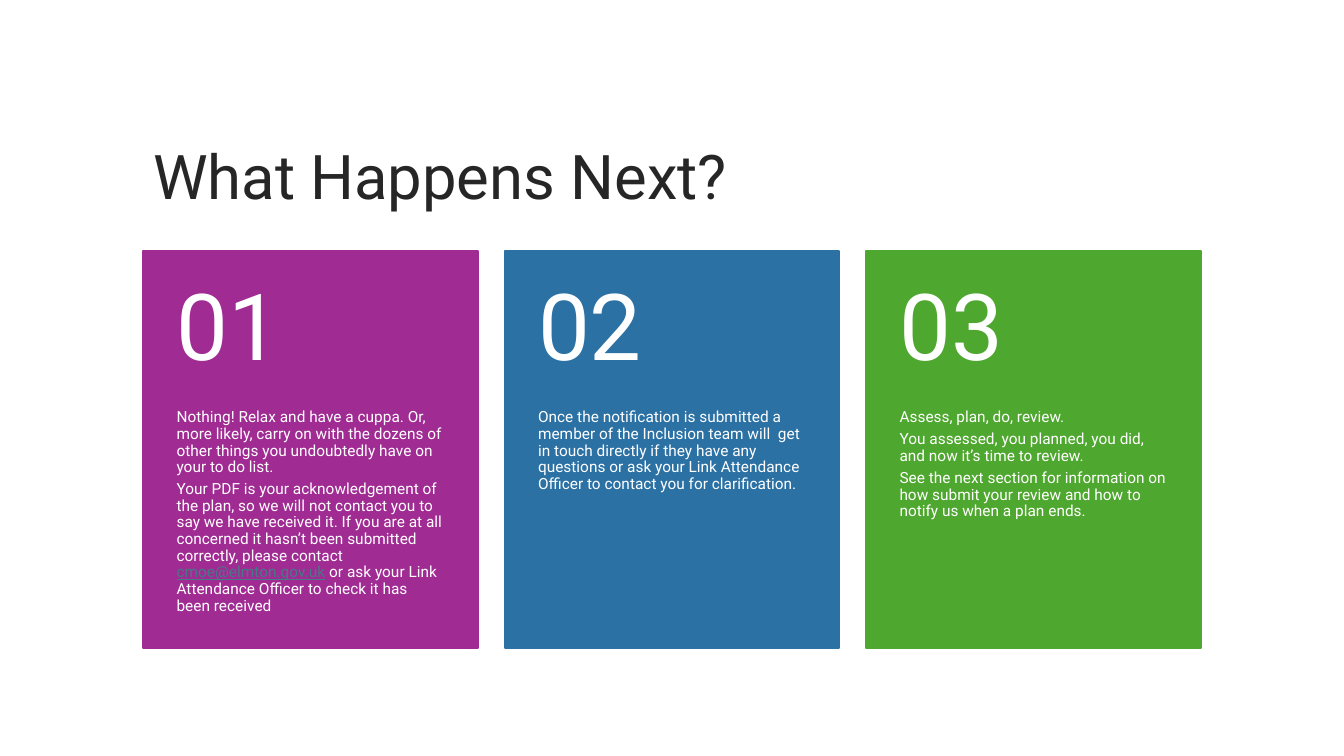
from dataclasses import dataclass

from pptx import Presentation
from pptx import util as u
from pptx.dml.color import RGBColor
from pptx.enum import shapes, text


@dataclass(frozen=True)
class Theme:
    face: str = "Roboto"
    ink: str = "262626"
    pale: str = "FFFFFF"
    link: str = "467886"
    fills: tuple = ("A02B93", "2C71A4", "4EA72E")
    title: int = 44
    digit: int = 66
    body: int = 11


class Deck:
    def __init__(self, theme):
        self.theme = theme
        self.file = Presentation()
        self.file.slide_width = u.Cm(33.87)
        self.file.slide_height = u.Cm(19.05)
        self.slide = self.file.slides.add_slide(self.file.slide_layouts[6])

    def apply(self, item, style):
        for key, value in style.items():
            setattr(item, key, value)

    def panel(self, box, fill):
        panel = self.slide.shapes.add_shape(
            shapes.MSO_SHAPE.RECTANGLE, *map(u.Cm, box))
        panel.shadow.inherit = False
        panel.fill.solid()
        panel.fill.fore_color.rgb = RGBColor.from_string(fill)
        panel.line.color.rgb = RGBColor.from_string(fill)
        panel.line.width = u.Pt(1.5)

    def text(self, box, paras, size, color, pads, middle=True, after=0.0):
        frame = self.slide.shapes.add_textbox(*map(u.Cm, box)).text_frame
        side, top, base = map(u.Cm, pads)
        anchor = text.MSO_ANCHOR.MIDDLE if middle else text.MSO_ANCHOR.TOP
        self.apply(frame, {
            "word_wrap": True, "vertical_anchor": anchor,
            "margin_left": side, "margin_right": side,
            "margin_top": top, "margin_bottom": base})
        for i, runs in enumerate(paras):
            para = frame.add_paragraph() if i else frame.paragraphs[0]
            self.apply(para, {
                "line_spacing": 0.9, "space_before": u.Pt(0),
                "space_after": u.Pt(size * after)})
            for words in runs:
                run = para.add_run()
                run.text = words
                link = "@" in words
                self.apply(run.font, {
                    "name": self.theme.face, "size": u.Pt(size),
                    "underline": link})
                hue = self.theme.link if link else color
                run.font.color.rgb = RGBColor.from_string(hue)

    def card(self, index, paras):
        look = self.theme
        left, top, wide, head, foot = 3.61 + 9.11 * index, 6.33, 8.43, 3.99, 6.0
        self.panel((left, top, wide, head + foot), look.fills[index])
        self.text((left, top + head, wide, foot), paras, look.body, look.pale,
                  (0.84, 0, 0.91), middle=False, after=0.35)
        self.text((left, top, wide, head), [[f"{index + 1:02}"]], look.digit,
                  look.pale, (0.84, 0.46, 0.46), after=0.35)


STEPS = [
    [
        ["Nothing! Relax and have a cuppa. Or, more likely, carry on with the "
         "dozens of other things you undoubtedly have on your to do list."],
        ["Your PDF is your acknowledgement of the plan, so we will not contact "
         "you to say we have received it. If you are at all concerned it hasn’t "
         "been submitted correctly, please contact ",
         "cmoe@elmton.gov.uk",
         " or ask your Link Attendance Officer to check it has been received"],
    ],
    [
        ["Once the notification is submitted a member of the Inclusion team "
         "will  get in touch directly if they have any questions or ask your "
         "Link Attendance Officer to contact you for clarification."],
    ],
    [
        ["Assess, plan, do, review."],
        ["You assessed, you planned, you did, and now it’s time to review."],
        ["See the next section for information on how submit your review and "
         "how to notify us when a plan ends."],
    ],
]


def main():
    look = Theme()
    deck = Deck(look)
    deck.text((3.61, 2.72, 26.67, 3.63), [["What Happens Next?"]],
              look.title, look.ink, (0.25, 0.13, 0.13))
    for index, paras in enumerate(STEPS):
        deck.card(index, paras)
    deck.file.save("out.pptx")


if __name__ == "__main__":
    main()
